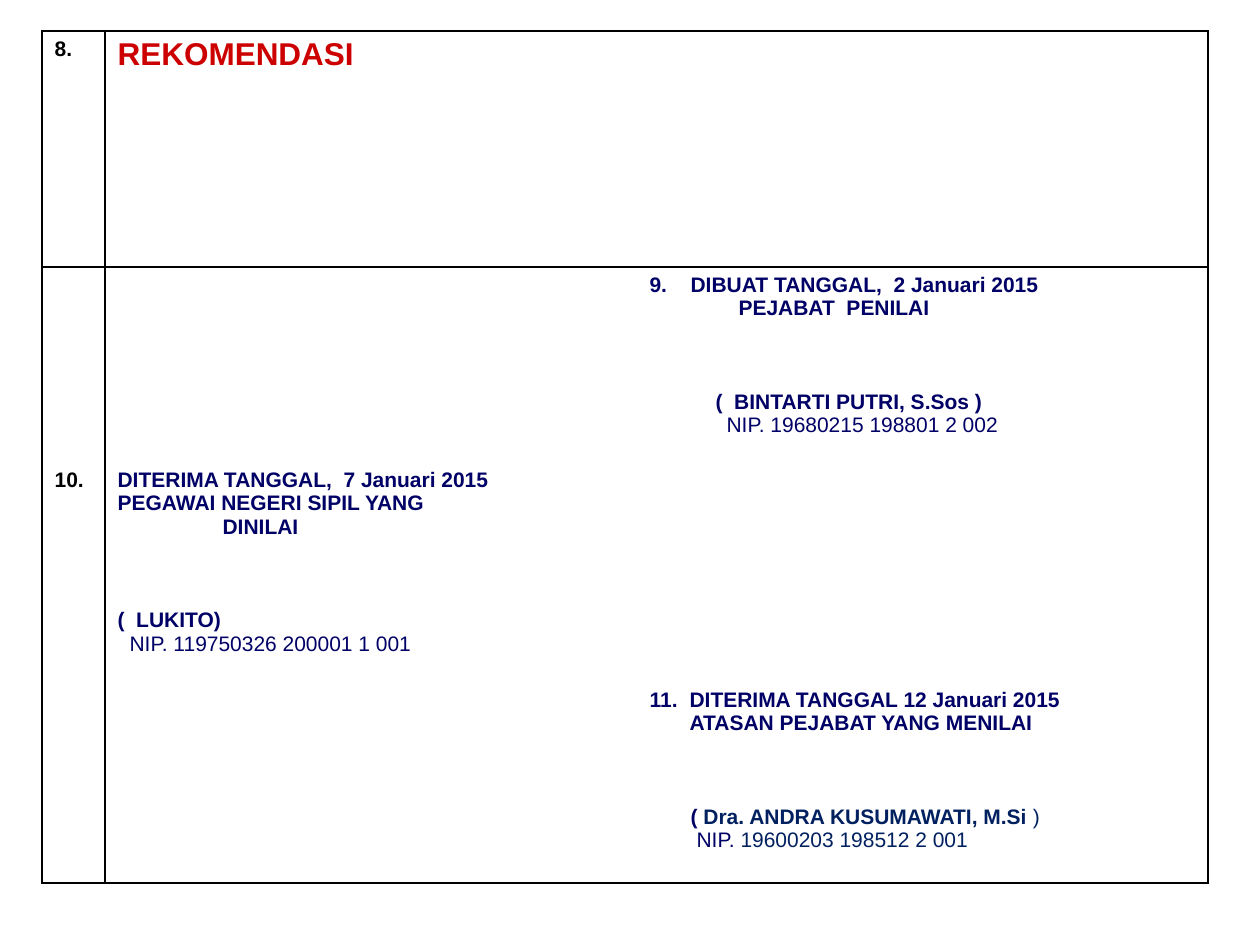
from lxml import etree
from pptx import Presentation
from pptx.dml.color import RGBColor
from pptx.enum.text import PP_ALIGN as Align
from pptx.oxml.ns import qn
from pptx.util import Emu, Pt

SCALE = 914400 / 126
COLORS = {"black": "000000", "red": "CC0000", "navy": "000066", "blue": "002060"}
COLUMNS = [63, 532, 571]
ROWS = [236, 195, 220, 201]
SIGNATURE_GAP = 40


def px(value):
    return Emu(round(value * SCALE))


class FormSlide:
    font = "Arial"

    def __init__(self, presentation):
        self.slide = presentation.slides.add_slide(presentation.slide_layouts[6])

    def table(self, left, top, columns, rows):
        frame = self.slide.shapes.add_table(
            len(rows), len(columns), px(left), px(top), px(sum(columns)), px(sum(rows)))
        table = frame.table
        table.first_row = table.horz_banding = False
        for column, width in zip(table.columns, columns):
            column.width = px(width)
        for row, height in zip(table.rows, rows):
            row.height = px(height)
        return table

    def borders(self, cell, sides):
        cell.fill.background()
        properties = cell._tc.get_or_add_tcPr()
        for index, side in enumerate("LRTB"):
            line = etree.Element(qn(f"a:ln{side}"), w=str(Pt(1)))
            if side in sides:
                fill = etree.SubElement(line, qn("a:solidFill"))
                etree.SubElement(fill, qn("a:srgbClr"), val=COLORS["black"])
            else:
                etree.SubElement(line, qn("a:noFill"))
            properties.insert(index, line)

    def paragraph(self, cell, runs, indent=0, hanging=0, before=0, size=12, align=Align.JUSTIFY):
        frame = cell.text_frame
        paragraph = frame.paragraphs[0]
        if paragraph.runs:
            paragraph = frame.add_paragraph()
        paragraph.alignment = align
        if before:
            paragraph.space_before = Pt(before)
        properties = paragraph._p.get_or_add_pPr()
        properties.set("marL", str(px(indent)))
        properties.set("indent", str(px(-hanging)))
        for text, color, bold in runs:
            run = paragraph.add_run()
            run.text = text
            run.font.name = self.font
            run.font.size = Pt(size)
            run.font.bold = bold
            run.font.color.rgb = RGBColor.from_string(COLORS[color])

    def signature(self, cell, lines):
        for indent, hanging, before, runs in lines:
            self.paragraph(cell, runs, indent, hanging, before)


def main():
    presentation = Presentation()
    presentation.slide_width, presentation.slide_height = px(1260), px(945)
    form = FormSlide(presentation)
    table = form.table(42, 31, COLUMNS, ROWS)
    for row in range(len(ROWS)):
        for column in range(len(COLUMNS)):
            shown = {
                "L": column < 2,
                "R": column != 1 or row == 0,
                "T": row < 2,
                "B": row in (0, len(ROWS) - 1),
            }
            form.borders(table.cell(row, column), [side for side in shown if shown[side]])
    table.cell(0, 1).merge(table.cell(0, 2))

    form.paragraph(table.cell(0, 0), [("8.", "black", True)])
    form.paragraph(table.cell(0, 1), [("REKOMENDASI", "red", True)], size=18, align=Align.LEFT)
    form.paragraph(table.cell(2, 0), [("10.", "black", True)])

    form.signature(table.cell(1, 2), [
        (41, 41, 0, [("9.\tDIBUAT TANGGAL,  2 Januari 2015", "navy", True)]),
        (89, 0, 0, [("PEJABAT  PENILAI", "navy", True)]),
        (66, 0, SIGNATURE_GAP, [("(  BINTARTI PUTRI, S.Sos )", "navy", True)]),
        (77, 0, 0, [("NIP. 19680215 198801 2 002", "navy", False)]),
    ])
    form.signature(table.cell(2, 1), [
        (0, 0, 0, [("DITERIMA TANGGAL,  7 Januari 2015", "navy", True)]),
        (0, 0, 0, [("PEGAWAI NEGERI SIPIL YANG", "navy", True)]),
        (105, 0, 0, [("DINILAI", "navy", True)]),
        (0, 0, SIGNATURE_GAP, [("(  LUKITO)", "navy", True)]),
        (12, 0, 0, [("NIP. 119750326 200001 1 001", "navy", False)]),
    ])
    form.signature(table.cell(3, 2), [
        (40, 40, 0, [("11.\tDITERIMA TANGGAL 12 Januari 2015", "navy", True)]),
        (40, 0, 0, [("ATASAN PEJABAT YANG MENILAI", "navy", True)]),
        (41, 0, SIGNATURE_GAP, [
            ("( ", "navy", True),
            ("Dra. ANDRA KUSUMAWATI, M.Si ", "blue", True),
            (")", "blue", False),
        ]),
        (47, 0, 0, [("NIP. ", "navy", False), ("19600203 198512 2 001", "blue", False)]),
    ])
    presentation.save("out.pptx")


if __name__ == "__main__":
    main()
